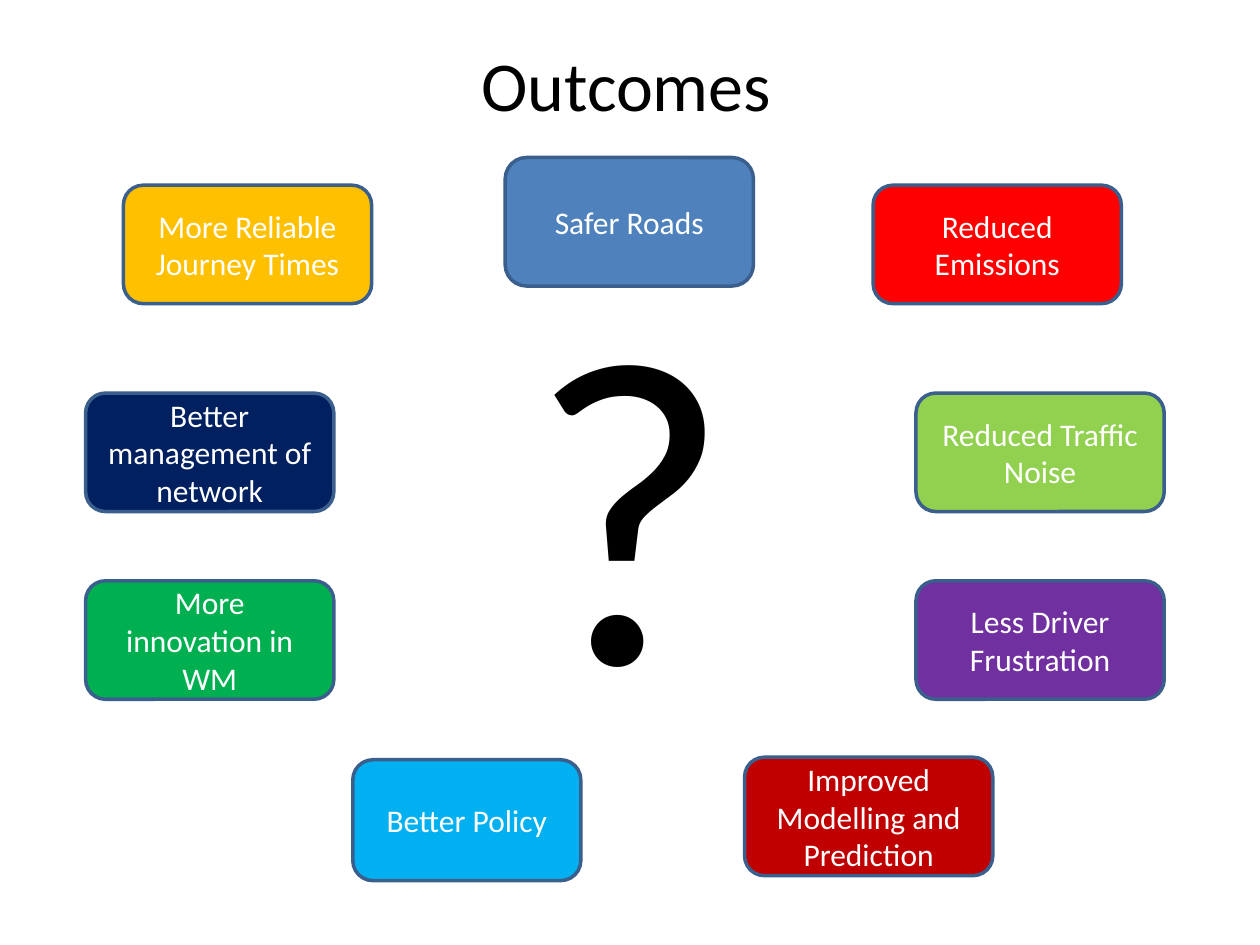
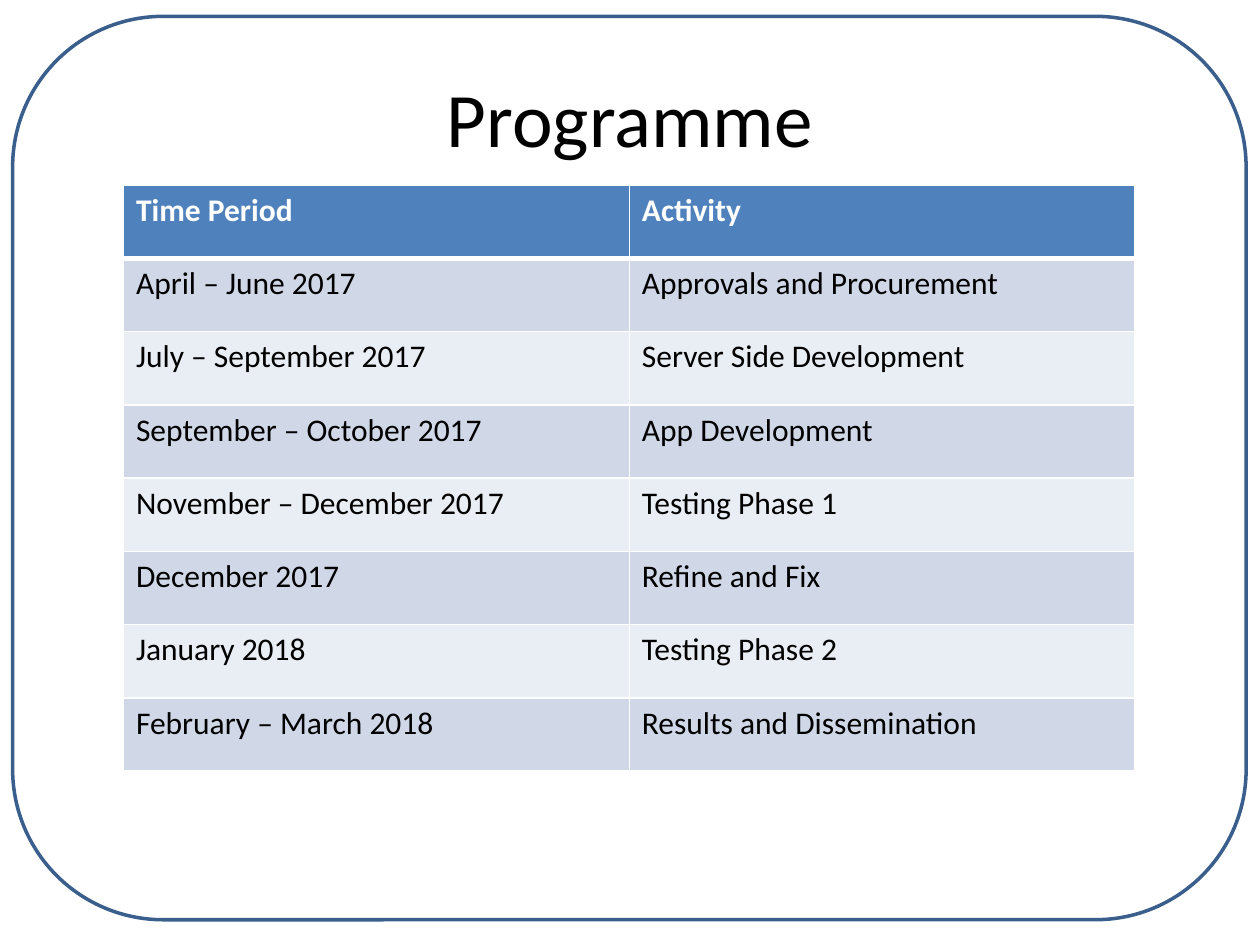
from typing import NamedTuple

from lxml.etree import SubElement as Sub
from pptx import Presentation
from pptx.dml.color import RGBColor as Rgb
from pptx.enum.shapes import MSO_SHAPE as Shape
from pptx.enum.text import MSO_ANCHOR as Anchor, MSO_AUTO_SIZE as Fit, PP_ALIGN as Align
from pptx.oxml.ns import qn
from pptx.util import Inches, Pt

# Shared look
FONT = "Calibri"
HUES = {
    "black": "000000", "white": "FFFFFF", "edge": "3A5F8C", "blue": "4F81BD",
    "band": "D0D8E8", "pale": "E9EDF4", "gold": "FFC000", "green": "00B050",
    "dark red": "C00000", "navy": "002060", "purple": "7030A0",
    "lime": "92D050", "red": "FF0000", "sky": "00B0F0",
}

# The slide is a grid of 100 columns by 75 rows
WIDE, HIGH = Inches(10), Inches(7.5)
COLS, ROWS = 100, 75


class Box(NamedTuple):
    col: float
    row: float
    cols: float
    rows: float

    def place(self) -> tuple[int, int, int, int]:
        return (round(self.col * WIDE / COLS), round(self.row * HIGH / ROWS),
                round(self.cols * WIDE / COLS), round(self.rows * HIGH / ROWS))


class Card(NamedTuple):
    text: str
    hue: str
    col: float
    row: float
    cols: float = 19.7
    rows: float = 9.4


# Card lines
LEFT, RIGHT = 6.8, 72.7
TOP, UPPER, LOWER, BASE = 14.7, 31.2, 46.1, 60.1

CARDS = [
    Card("More Reliable Journey Times", "gold", 9.8, TOP),
    Card("More innovation in WM", "green", LEFT, LOWER),
    Card("Improved Modelling and Prediction", "dark red", 59.1, BASE),
    Card("Better management of network", "navy", LEFT, UPPER),
    Card("Less Driver Frustration", "purple", RIGHT, LOWER),
    Card("Reduced Traffic Noise", "lime", RIGHT, UPPER),
    Card("Reduced Emissions", "red", 69.3, TOP),
    Card("Better Policy", "sky", 28, 60.3, 18.1, 9.6),
    Card("Safer Roads", "blue", 40.1, 12.5, rows=10.2),
]

PLAN = [
    ("Time Period", "Activity"),
    ("April – June 2017", "Approvals and Procurement"),
    ("July – September 2017", "Server Side Development"),
    ("September – October 2017", "App Development"),
    ("November – December 2017", "Testing Phase 1"),
    ("December 2017", "Refine and Fix"),
    ("January 2018", "Testing Phase 2"),
    ("February – March 2018", "Results and Dissemination"),
]


def tint(name: str) -> Rgb:
    return Rgb.from_string(HUES[name])


def write(frame, text: str, size: float, hue: str = "black",
          align=Align.CENTER, bold: bool = False) -> None:
    frame.text = text
    for para in frame.paragraphs:
        para.alignment = align
        for run in para.runs:
            font = run.font
            font.name, font.size, font.bold = FONT, Pt(size), bold
            font.color.rgb = tint(hue)


def move(shape, box: Box) -> None:
    shape.left, shape.top, shape.width, shape.height = box.place()


def head(slide, text: str, size: float, box: Box, anchor=Anchor.MIDDLE) -> None:
    title = slide.shapes.title
    move(title, box)
    write(title.text_frame, text, size)
    title.text_frame.vertical_anchor = anchor
    title.text_frame.auto_size = Fit.NONE


def panel(slide, box: Box, hue: str | None = None):
    shape = slide.shapes.add_shape(Shape.ROUNDED_RECTANGLE, *box.place())
    shape.shadow.inherit = False
    shape.line.color.rgb = tint("edge")
    shape.line.width = Pt(2)
    if hue:
        shape.fill.solid()
        shape.fill.fore_color.rgb = tint(hue)
    else:
        shape.fill.background()
    return shape


def rule(cell, side: str, width: float) -> None:
    line = Sub(cell._tc.get_or_add_tcPr(), qn(f"a:ln{side}"), w=str(Pt(width)))
    Sub(Sub(line, qn("a:solidFill")), qn("a:srgbClr"), val=HUES["white"])


def grid(slide, data: list[tuple[str, str]], box: Box) -> None:
    table = slide.shapes.add_table(len(data), len(data[0]), *box.place()).table
    for r, items in enumerate(data):
        first = r == 0
        fill = "blue" if first else ("pale", "band")[r % 2]
        for c, text in enumerate(items):
            cell = table.cell(r, c)
            write(cell.text_frame, text, 18, "white" if first else "black",
                  Align.LEFT, first)
            for side in "LRTB":
                thick = (r, side) in ((0, "B"), (1, "T"))
                rule(cell, side, 3 if thick else 1)
            cell.fill.solid()
            cell.fill.fore_color.rgb = tint(fill)


def goals(deck) -> None:
    slide = deck.slides.add_slide(deck.slide_layouts[1])
    head(slide, "Outcomes", 40, Box(34.7, 2.8, 30, 7.7), Anchor.TOP)

    # Large centre mark, without a bullet
    body = slide.placeholders[1]
    move(body, Box(5, 17.5, 90, 49.5))
    write(body.text_frame, "?", 250)
    body.text_frame.auto_size = Fit.NONE
    props = body.text_frame.paragraphs[0]._p.get_or_add_pPr()
    props.set("marL", "0")
    props.set("indent", "0")
    Sub(props, qn("a:buNone"))

    # Ring of cards
    for card in CARDS:
        shape = panel(slide, Box(*card[2:]), card.hue)
        write(shape.text_frame, card.text, 18, "white")
        shape.text_frame.vertical_anchor = Anchor.MIDDLE


def dates(deck) -> None:
    slide = deck.slides.add_slide(deck.slide_layouts[5])
    head(slide, "Programme", 44, Box(5, 3, 90, 12.5))
    grid(slide, PLAN, Box(9.8, 14.7, 80.3, 46.5))
    panel(slide, Box(1, 1.3, 97.9, 71.7))


def main() -> None:
    deck = Presentation()
    deck.slide_width, deck.slide_height = WIDE, HIGH
    goals(deck)
    dates(deck)
    deck.save("out.pptx")


if __name__ == "__main__":
    main()
